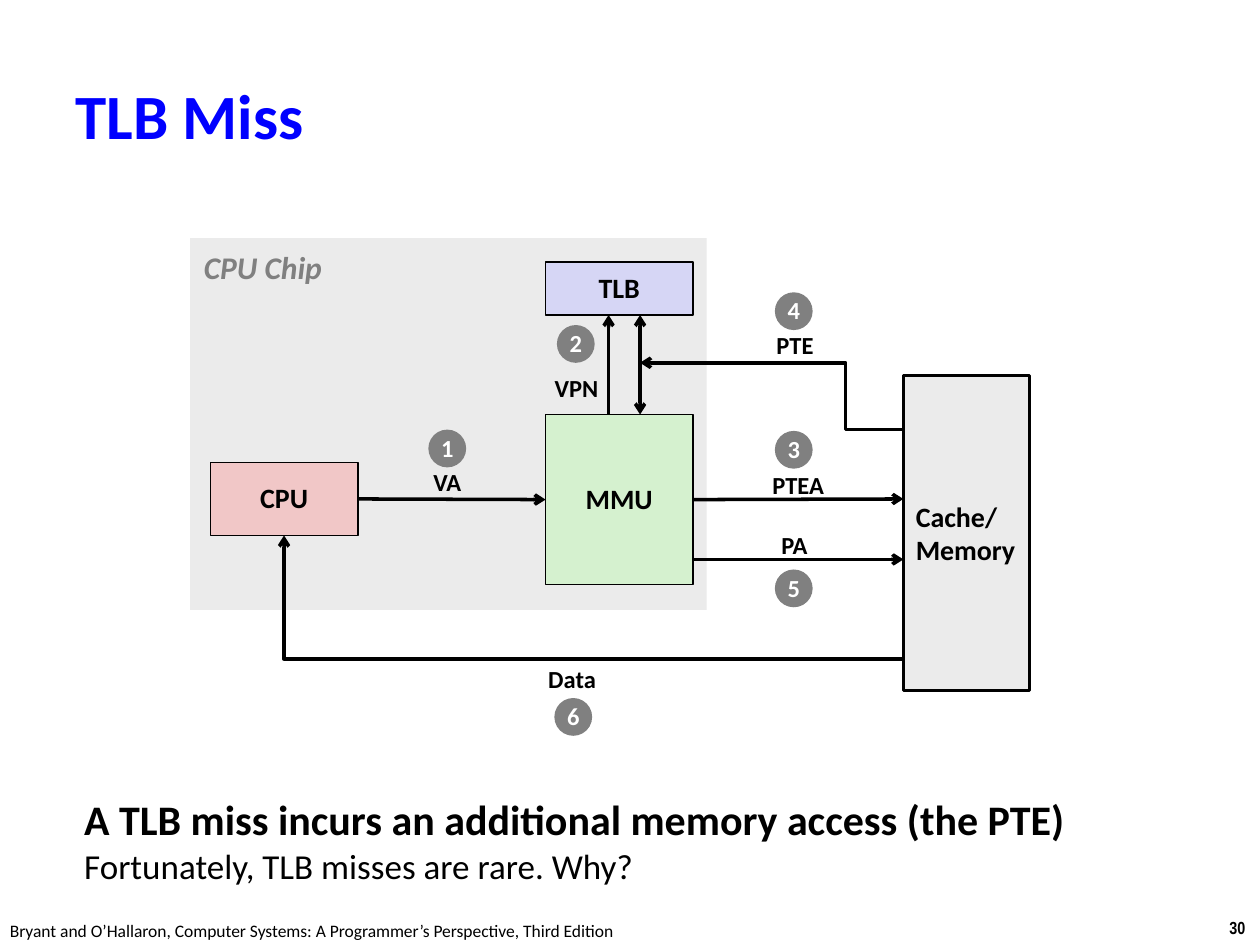
from lxml import etree
from pptx import Presentation
from pptx.dml.color import RGBColor
from pptx.enum.shapes import MSO_CONNECTOR, MSO_SHAPE
from pptx.enum.text import MSO_ANCHOR, MSO_AUTO_SIZE, PP_ALIGN
from pptx.oxml.ns import qn
from pptx.util import Inches, Pt

RECT, OVAL = MSO_SHAPE.RECTANGLE, MSO_SHAPE.OVAL
STRAIGHT, ELBOW = MSO_CONNECTOR.STRAIGHT, MSO_CONNECTOR.ELBOW
LEFT, CENTER = PP_ALIGN.LEFT, PP_ALIGN.CENTER
TOP, MIDDLE = MSO_ANCHOR.TOP, MSO_ANCHOR.MIDDLE
SIDE_LEFT, SIDE_BOTTOM, SIDE_RIGHT = 1, 2, 3


def color(hex_value):
    return RGBColor.from_string(hex_value)


def add_run(paragraph, text, size=16, ink="000000", bold=True, italic=False, font="Calibri"):
    run = paragraph.add_run()
    run.text = text
    run.font.name = font
    run.font.size = Pt(size)
    run.font.bold = bold
    run.font.italic = italic
    run.font.color.rgb = color(ink)


def write_text(frame, text, align=LEFT, anchor=TOP, wrap=False, spacing=None, **style):
    """Fill a text frame, one paragraph for each line of text."""
    frame.word_wrap = wrap
    frame.auto_size = MSO_AUTO_SIZE.NONE
    frame.vertical_anchor = anchor
    for index, line in enumerate(text.split("\n")):
        paragraph = frame.add_paragraph() if index else frame.paragraphs[0]
        paragraph.alignment = align
        paragraph.line_spacing = spacing
        add_run(paragraph, line, **style)


class Diagram:
    """The current slide and the style its elements share."""

    gray, panel, black, white = "808080", "EBEBEB", "000000", "FFFFFF"
    centered = {"align": CENTER, "anchor": MIDDLE, "spacing": 0.98}
    badge_size = 0.3

    def __init__(self, slide):
        self.slide = slide

    def title(self, text, *box):
        title = self.slide.shapes.title
        title.left, title.top, title.width, title.height = map(Inches, box)
        write_text(title.text_frame, text, anchor=MIDDLE, wrap=True, size=36, ink="0000FF")

    def shape(self, kind, box, fill, line_width=None):
        shape = self.slide.shapes.add_shape(kind, *map(Inches, box))
        shape.shadow.inherit = False
        shape.fill.solid()
        shape.fill.fore_color.rgb = color(fill)
        if line_width:
            shape.line.color.rgb = color(self.black)
            shape.line.width = Pt(line_width)
        else:
            shape.line.fill.background()
        return shape

    def unit(self, text, box, fill, line_width=1, **style):
        unit = self.shape(RECT, box, fill, line_width)
        write_text(unit.text_frame, text, **{**self.centered, **style})
        return unit

    def badge(self, number, left, top):
        badge = self.shape(OVAL, (left, top, self.badge_size, self.badge_size), self.gray)
        write_text(badge.text_frame, str(number), size=14, ink=self.white, **self.centered)

    def text(self, text, box, **style):
        frame = self.slide.shapes.add_textbox(*map(Inches, box)).text_frame
        write_text(frame, text, **style)
        return frame

    def label(self, text, left, top, width):
        self.text(text, (left, top, width, 0.33), size=14, **self.centered)

    def arrow(self, start, end, kind=STRAIGHT, both=False, source=None, target=None):
        """Draw an arrow; source and target are (shape, side) pairs to join."""
        arrow = self.slide.shapes.add_connector(kind, *map(Inches, start + end))
        if source:
            arrow.begin_connect(*source)
        if target:
            arrow.end_connect(*target)
        arrow.line.color.rgb = color(self.black)
        arrow.line.width = Pt(2)
        line = arrow.line._get_or_add_ln()
        for tag in ("a:headEnd", "a:tailEnd") if both else ("a:tailEnd",):
            etree.SubElement(line, qn(tag), type="arrow")
        etree.SubElement(arrow._element.spPr, qn("a:effectLst"))
        return arrow

    def elbow(self, start, end, preset, bend=None, **joins):
        arrow = self.arrow(start, end, ELBOW, **joins)
        geometry = arrow._element.spPr.find(qn("a:prstGeom"))
        geometry.set("prst", preset)
        if bend is not None:
            guides = geometry.find(qn("a:avLst"))
            if guides is None:
                guides = etree.SubElement(geometry, qn("a:avLst"))
            etree.SubElement(guides, qn("a:gd"), name="adj1", fmla=f"val {round(bend * 100000)}")


def main():
    presentation = Presentation()
    presentation.slide_width, presentation.slide_height = Inches(10), Inches(7.5)
    diagram = Diagram(presentation.slides.add_slide(presentation.slide_layouts[5]))

    # Title and footer
    diagram.title("TLB Miss", 0.5, 0.48, 9.53, 0.86)
    diagram.text("30", (9.66, 7.23, 0.34, 0.27), size=10, font="Arial Narrow")
    diagram.text(
        "Bryant and O’Hallaron, Computer Systems: A Programmer’s Perspective, Third Edition",
        (-0.02, 7.25, 5.08, 0.27), size=10, bold=False)

    # Chip and hardware units
    diagram.shape(RECT, (1.51, 1.89, 4.1, 2.95), diagram.panel)
    diagram.text("CPU Chip", (1.52, 1.92, 1.16, 0.4), size=18, ink=diagram.gray, italic=True)
    mmu = diagram.unit("MMU", (4.33, 3.29, 1.17, 1.35), "D5F1CF")
    cpu = diagram.unit("CPU", (1.67, 3.67, 1.17, 0.58), "F1C7C7")
    diagram.unit("TLB", (4.33, 2.08, 1.17, 0.42), "D6D6F5")
    diagram.unit("Cache/\nMemory", (7.17, 2.98, 1, 2.5), diagram.panel,
                 line_width=1.5, align=LEFT, spacing=None)

    # Transfers between the units
    diagram.arrow((2.84, 3.96), (4.33, 3.96), source=(cpu, SIDE_RIGHT), target=(mmu, SIDE_LEFT))
    diagram.arrow((4.83, 3.29), (4.83, 2.5))
    diagram.arrow((5.08, 2.5), (5.08, 3.29), both=True)
    diagram.arrow((5.5, 3.96), (7.17, 3.96), source=(mmu, SIDE_RIGHT))
    diagram.arrow((5.5, 4.44), (7.17, 4.44))
    diagram.elbow((7.17, 3.41), (5.08, 2.88), "bentConnector3", bend=0.22)
    diagram.elbow((7.17, 5.23), (2.25, 4.25), "bentConnector2", target=(cpu, SIDE_BOTTOM))

    # Numbered steps: label (left, top, width) and badge (left, top)
    steps = [
        ("VA", (3.34, 3.67, 0.42), (3.4, 3.41)),
        ("VPN", (4.3, 2.92, 0.55), (4.42, 2.58)),
        ("PTEA", (6.03, 3.69, 0.61), (6.15, 3.42)),
        ("PTE", (6.06, 2.58, 0.5), (6.15, 2.32)),
        ("PA", (6.1, 4.17, 0.41), (6.15, 4.52)),
        ("Data", (4.25, 5.23, 0.58), (4.4, 5.54)),
    ]
    for number, (name, label_place, badge_place) in enumerate(steps, start=1):
        diagram.label(name, *label_place)
        diagram.badge(number, *badge_place)

    # Takeaway
    takeaway = diagram.text("A TLB miss incurs an additional memory access (the PTE)",
                            (0.57, 6.25, 8.43, 1), wrap=True, size=24).paragraphs[0]
    takeaway.add_line_break()
    add_run(takeaway, "Fortunately, TLB misses are rare. Why?", size=20, bold=False)

    presentation.save("out.pptx")


if __name__ == "__main__":
    main()
